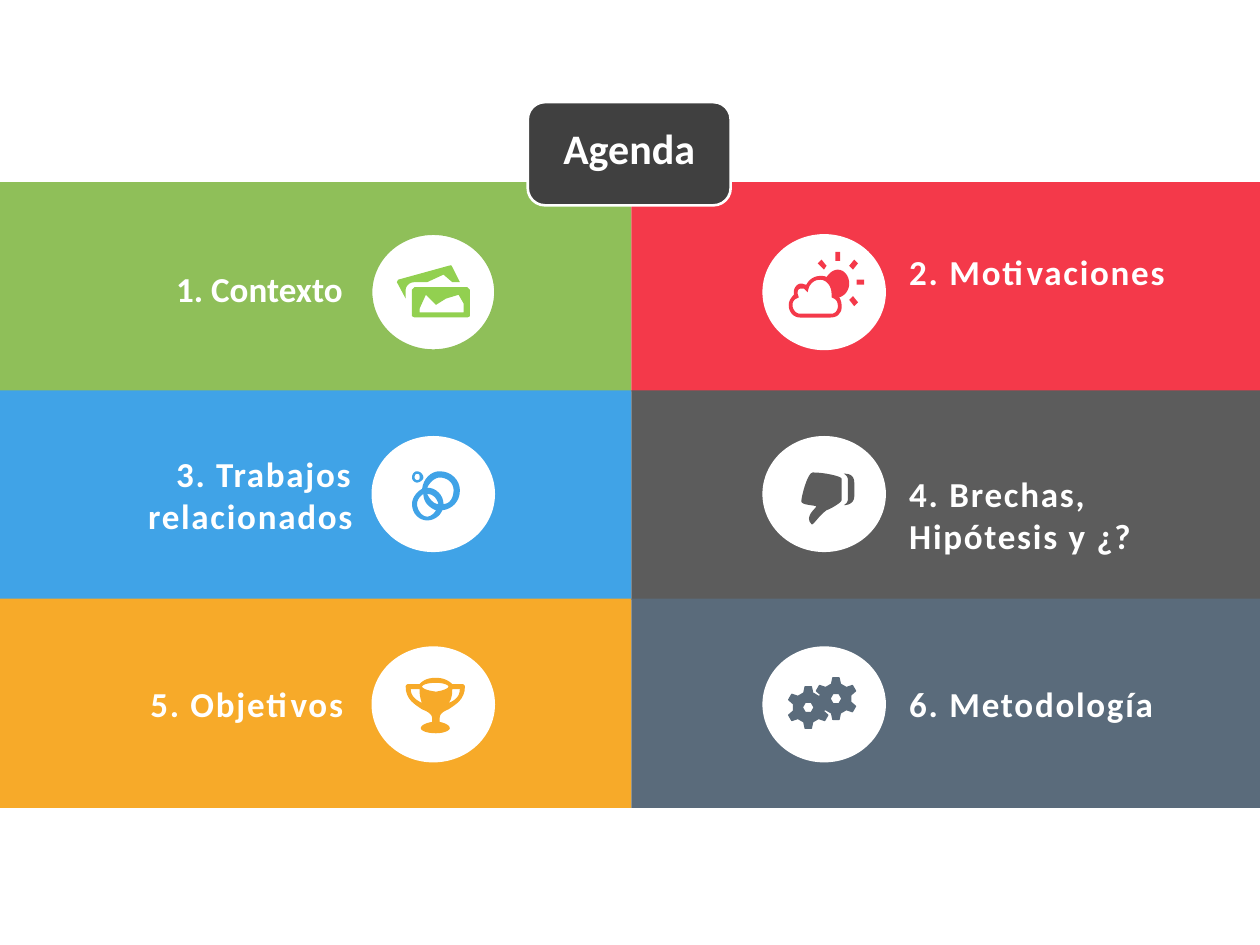
from dataclasses import dataclass
from math import cos, pi, sin

from pptx import Presentation
from pptx import util as u
from pptx.dml.color import RGBColor
from pptx.enum import shapes, text

COLORS = {
    "white": "FFFFFF", "dark": "404040", "green": "8FBF59", "lime": "92D050",
    "red": "F4394A", "blue": "40A3E7", "gray": "5C5C5C", "orange": "F7AA29",
    "slate": "5A6B7B",
}
ICON_UNIT = u.Cm(0.0254)
CURVE_STEPS = 8
PANEL_W, PANEL_H, PANEL_TOP, ROW_PITCH = 12.73, 4.22, 3.67, 4.2
DISC_W, DISC_H = 2.49, 2.34
DISC_LEFT = (7.49, 15.37)
DISC_TOP = (4.72, 8.79, 13.03)
SLIDE_W = 25.4


@dataclass
class Box:
    left: float
    top: float
    width: float
    height: float

    def lengths(self) -> list[u.Cm]:
        return [u.Cm(v) for v in (self.left, self.top, self.width, self.height)]


@dataclass
class Topic:
    label: str
    color: str
    box: Box
    spacing: int = 100


@dataclass
class Icon:
    """Contours in icon units: pairs are line ends, six numbers are a Bézier curve."""
    left: float
    top: float
    color: str
    contours: list
    outlined: bool = False


TOPICS = [
    Topic("1. Contexto", "green", Box(3.07, 5.26, 4.09, 1.12), spacing=0),
    Topic("2. Motivaciones", "red", Box(18.08, 4.93, 6.22, 1.12)),
    Topic("3. Trabajos relacionados", "blue", Box(0.71, 8.99, 6.65, 1.96)),
    Topic("4. Brechas, Hipótesis y ¿?", "gray", Box(18.08, 9.4, 6.63, 1.96)),
    Topic("5. Objetivos", "orange", Box(2.24, 13.64, 4.93, 1.12)),
    Topic("6. Metodología", "slate", Box(18.08, 13.64, 5.61, 1.12)),
]


def gear() -> list:
    """Six-toothed wheel around (0, 0) with a hexagonal hole."""
    tooth = [(-3.5, -11.5), (-2.5, -16.5), (2.5, -16.5), (3.5, -11.5)]
    turns = [i * pi / 3 for i in range(6)]
    wheel = [(x * cos(a) - y * sin(a), x * sin(a) + y * cos(a)) for a in turns for x, y in tooth]
    hole = [(4.7 * cos(a), 4.7 * sin(a)) for a in turns]
    return [wheel, hole]


PHOTOS = [
    [(50, 14), (44, 2), (43, 0.5), (41, 1), (1, 12), (0, 14), (7, 27), (7, 20),
     (7, 17, 10, 14, 14, 14), (24, 14), (37, 8), (44, 14)],
    [(56, 18), (14, 18), (12, 20), (12, 41), (14, 42), (56, 42), (58, 41), (58, 20)],
    [(53, 38), (18, 38), (18, 35), (23, 24), (31, 32), (39, 27), (49, 24), (53, 31)],
]
BUBBLES = [
    [(22, 0), (15, 0, 9, 6, 8, 14), (4, 16, 0, 21, 0, 26), (0, 34, 6, 39, 12, 39),
     (17, 39, 22, 36, 24, 31), (32, 30, 38, 24, 38, 15), (38, 7, 31, 0, 22, 0)],
    [(12, 36), (8, 36, 4, 31, 4, 26), (4, 23, 6, 20, 9, 18), (9, 25, 14, 29, 19, 31),
     (18, 33, 15, 36, 12, 36)],
    [(12, 18), (17, 18, 20, 22, 21, 26), (17, 26, 14, 22, 12, 18)],
    [(25, 26), (25, 19, 19, 13, 12, 13), (14, 9, 18, 5, 22, 5), (28, 5, 33, 9, 33, 15),
     (33, 21, 30, 26, 25, 26)],
    [(4, 9), (6, 9, 9, 7, 9, 5), (9, 2, 6, 0, 4, 0), (2, 0, 0, 2, 0, 5), (0, 7, 2, 9, 4, 9)],
    [(4, 2), (6, 2, 6, 3, 6, 5), (6, 6, 6, 7, 4, 7), (3, 7, 2, 6, 2, 5), (2, 3, 3, 2, 4, 2)],
]
TROPHY = [
    [(27, 32), (27, 29, 29, 27, 34, 25), (40, 21, 47, 17, 47, 7), (47, 6, 46, 5, 45, 5),
     (37, 5), (35, 3, 31, 0, 24, 0), (16, 0, 13, 3, 11, 5), (2, 5), (1, 5, 0, 6, 0, 7),
     (0, 17, 7, 21, 13, 25), (18, 27, 21, 29, 21, 32), (21, 35), (15, 36, 12, 38, 12, 40),
     (12, 42, 17, 44, 24, 44), (30, 44, 35, 42, 35, 40), (35, 38, 32, 36, 27, 35)],
    [(34, 20), (36, 18, 37, 14, 37, 9), (43, 9), (43, 15, 39, 18, 34, 20)],
    [(24, 4), (31, 4, 34, 6, 34, 7), (34, 8, 31, 10, 24, 11), (16, 10, 13, 8, 13, 7),
     (13, 6, 16, 4, 24, 4)],
    [(4, 9), (11, 9), (11, 14, 12, 18, 13, 20), (9, 18, 4, 15, 4, 9)],
]
THUMB_DOWN = [
    [(12, 27), (12, 28, 2, 35, 8, 41), (9, 43, 14, 34, 20, 30), (23, 29, 32, 24, 32, 22),
     (32, 5), (32, 3, 18, 0, 9, 0), (5, 0, 0, 19, 0, 23), (0, 26, 11, 26, 12, 27)],
    [(34, 26), (36, 26, 42, 25, 42, 19), (42, 8), (42, 1, 36, 1, 34, 1), (33, 1, 37, 2, 37, 6),
     (37, 21), (37, 25, 33, 26, 34, 26)],
]
CLOUD_AND_SUN = [
    [(48, 11), (48, 5, 44, 0, 39, 0), (35, 0, 32, 3, 30, 6), (29, 5, 27, 5, 25, 5),
     (20, 5, 16, 8, 14, 12), (13, 12, 11, 11, 10, 11), (7, 11, 4, 14, 4, 18), (4, 20),
     (2, 22, 0, 25, 0, 28), (0, 34, 4, 38, 9, 38), (33, 38), (36, 38, 39, 37, 40, 35),
     (42, 33, 42, 31, 42, 29), (42, 26, 41, 23, 40, 22), (44, 21, 48, 17, 48, 11)],
    [(34, 35), (9, 35), (6, 35, 3, 32, 3, 28), (3, 26, 4, 24, 6, 23), (8, 22), (7, 19),
     (7, 16, 8, 15, 10, 15), (12, 15), (15, 18), (16, 14), (18, 10, 21, 8, 25, 8),
     (30, 8, 34, 13, 34, 19), (34, 22), (36, 23), (38, 24, 39, 26, 39, 29), (39, 32, 37, 35, 34, 35)],
]
RAYS = [
    [(52, -8), (55, -5), (51, 0), (48, -3)],
    [(52, 29), (48, 24), (51, 21), (55, 26)],
    [(26, -8), (30, -3), (28, 0), (23, -5)],
]
RAY_RECTS = [Box(16.84, 5.08, 0.1, 0.18), Box(17.27, 5.64, 0.15, 0.1)]
ICONS = [
    Icon(315, 210, "lime", PHOTOS),
    Icon(327, 374, "blue", BUBBLES),
    Icon(322, 538, "orange", TROPHY),
    Icon(636, 375, "gray", THUMB_DOWN),
    Icon(626, 214, "red", CLOUD_AND_SUN),
    *(Icon(626, 214, "red", [ray]) for ray in RAYS),
    Icon(663.5, 554.5, "slate", gear(), outlined=True),
    Icon(641.5, 561.5, "slate", gear(), outlined=True),
]


def paint(sp, fill: str, line: str | None = None, width: float = 1) -> None:
    sp.shadow.inherit = False
    sp.fill.solid()
    sp.fill.fore_color.rgb = RGBColor.from_string(COLORS[fill])
    if line:
        sp.line.color.rgb = RGBColor.from_string(COLORS[line])
        sp.line.width = u.Pt(width)
    else:
        sp.line.fill.background()


def add_preset(s, kind: str, box: Box, fill: str, line: str | None = None, width: float = 1) -> None:
    paint(s.shapes.add_shape(shapes.MSO_SHAPE[kind], *box.lengths()), fill, line, width)


def add_label(s, label: str, box: Box, size: int, align: str, spacing: int = 0) -> None:
    tf = s.shapes.add_textbox(*box.lengths()).text_frame
    tf.word_wrap = True
    tf.auto_size = text.MSO_AUTO_SIZE.SHAPE_TO_FIT_TEXT
    p = tf.paragraphs[0]
    p.alignment = text.PP_ALIGN[align]
    r = p.add_run()
    r.text = label
    p.font.name, p.font.size, p.font.bold = "Calibri", u.Pt(size), True
    p.font.color.rgb = RGBColor.from_string(COLORS["white"])
    if spacing:
        r._r.get_or_add_rPr().set("spc", str(spacing))


def flatten(contour: list) -> list[tuple[float, float]]:
    """Replace each Bézier curve by short straight steps."""
    points = [contour[0]]
    for step in contour[1:]:
        if len(step) == 2:
            points.append(step)
            continue
        ends = [points[-1], step[:2], step[2:4], step[4:]]
        for i in range(1, CURVE_STEPS + 1):
            t = i / CURVE_STEPS
            weights = ((1 - t) ** 3, 3 * t * (1 - t) ** 2, 3 * t * t * (1 - t), t ** 3)
            points.append(tuple(sum(w * e[k] for w, e in zip(weights, ends)) for k in (0, 1)))
    return points


def add_icon(s, icon: Icon) -> None:
    outlines = [[((icon.left + x) * ICON_UNIT, (icon.top + y) * ICON_UNIT)
                 for x, y in flatten(contour)] for contour in icon.contours]
    builder = s.shapes.build_freeform(*outlines[0][0])
    for i, points in enumerate(outlines):
        if i:
            builder.move_to(*points[0])
        builder.add_line_segments(points[1:], close=True)
    paint(builder.convert_to_shape(), icon.color, icon.color if icon.outlined else None, 0.75)


def main() -> None:
    prs = Presentation()
    prs.slide_width, prs.slide_height = u.Cm(SLIDE_W), u.Cm(19.05)
    s = prs.slides.add_slide(prs.slide_layouts[6])
    for i, topic in enumerate(TOPICS):
        row, col = divmod(i, 2)
        left = col * PANEL_W
        width = min(PANEL_W, SLIDE_W - left)
        add_preset(s, "RECTANGLE", Box(left, PANEL_TOP + row * ROW_PITCH, width, PANEL_H), topic.color)
    for i, topic in enumerate(TOPICS):
        row, col = divmod(i, 2)
        disc = Box(DISC_LEFT[col], DISC_TOP[row], DISC_W, DISC_H)
        add_preset(s, "OVAL", disc, "white", "green" if i == 0 else None)
        add_label(s, topic.label, topic.box, 20, "LEFT" if col else "RIGHT", topic.spacing)
    add_preset(s, "ROUNDED_RECTANGLE", Box(10.64, 2.06, 4.09, 2.08), "dark", "white", 1.5)
    add_label(s, "Agenda", Box(10.64, 2.34, 4.09, 1.27), 24, "CENTER")
    for icon in ICONS:
        add_icon(s, icon)
    for box in RAY_RECTS:
        add_preset(s, "RECTANGLE", box, "red")
    prs.save("out.pptx")


if __name__ == "__main__":
    main()
